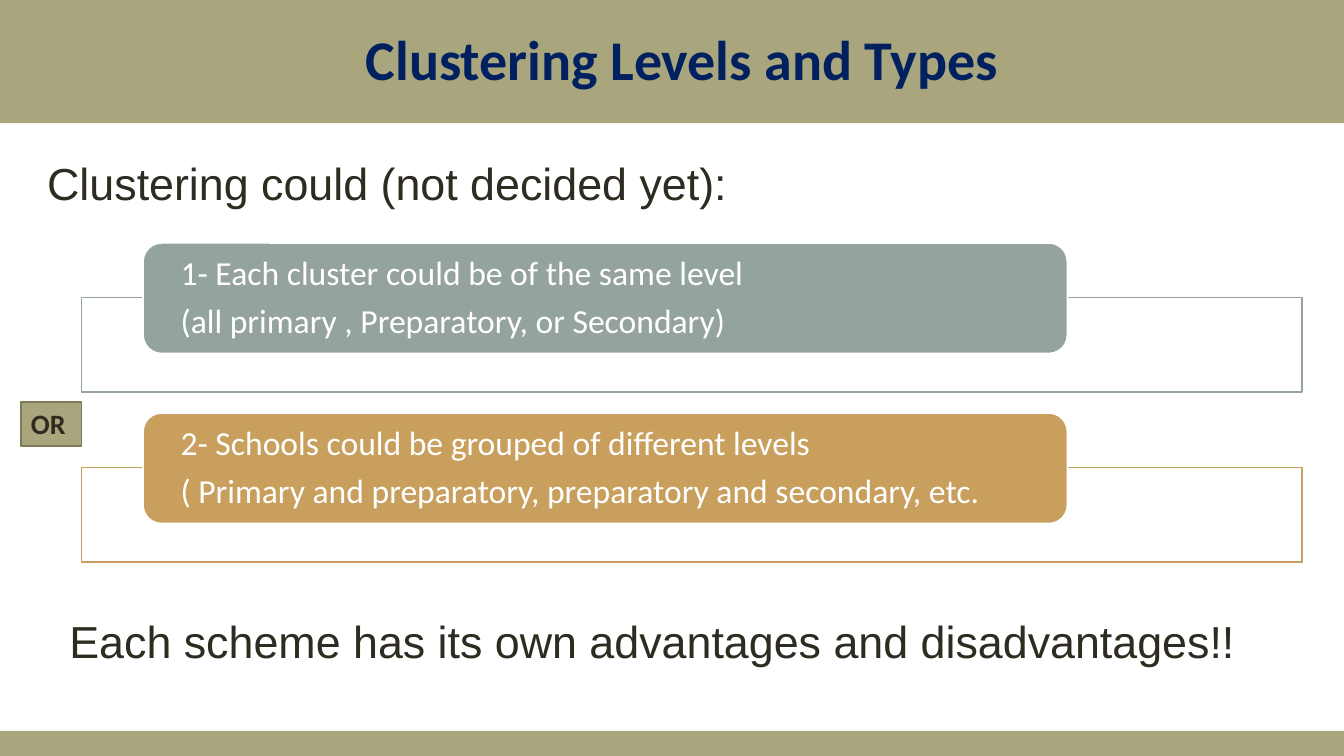
from pptx import Presentation
from pptx import util as u
from pptx.dml.color import RGBColor
from pptx.enum import shapes, text

# Content
TITLE = "Clustering Levels and Types"
# wording, (left, top, width, height)
STATEMENTS = [
    ("Clustering could (not decided yet):", (26.6, 108, 901.4, 46)),
    ("Each scheme has its own advantages and disadvantages!!", (42.5, 435, 869, 46)),
]
OPTIONS = [
    ("95A39D", ["1- Each cluster could be of the same level",
                "(all primary , Preparatory, or Secondary)"]),
    ("C89F5D", ["2- Schools could be grouped of different levels",
                "( Primary and preparatory, preparatory and secondary, etc."]),
]
OLIVE, OLIVE_EDGE, INK, NAVY, WHITE = "A9A57C", "7D7A5C", "2E2B21", "002060", "FFFFFF"

# Geometry in points
WIDTH, HEIGHT = 960, 540
HEADER_HEIGHT, FOOTER_HEIGHT = 88, 18
FRAME_LEFT, FRAME_WIDTH, FRAME_HEIGHT = 58.3, 872, 67.5
TAB_LEFT, TAB_TOP, TAB_WIDTH, TAB_HEIGHT = 102.2, 173.5, 660.3, 79
FRAME_DROP, OPTION_PITCH = 39, 121.5
RECTANGLE = shapes.MSO_SHAPE.RECTANGLE
ROUNDED = shapes.MSO_SHAPE.ROUNDED_RECTANGLE


def colour(value):
    return RGBColor.from_string(value)


def add_box(page, kind, place, fill, line=None):
    box = page.shapes.add_shape(kind, *map(u.Pt, place))
    box.shadow.inherit = False
    box.fill.solid()
    box.fill.fore_color.rgb = colour(fill)
    if line:
        box.line.color.rgb = colour(line)
        box.line.width = u.Pt(1.25)
    else:
        box.line.fill.background()
    return box


def write(box, lines, size, font, ink, bold=False,
          anchor=text.MSO_ANCHOR.TOP, spacing=1.0, after=0):
    frame = box.text_frame
    frame.word_wrap = True
    frame.vertical_anchor = anchor
    for index, line in enumerate(lines):
        para = frame.add_paragraph() if index else frame.paragraphs[0]
        para.alignment = text.PP_ALIGN.LEFT
        para.line_spacing = spacing
        para.space_before = u.Pt(0)
        para.space_after = u.Pt(after)
        span = para.add_run()
        span.text = line
        span.font.size = u.Pt(size)
        span.font.name = font
        span.font.bold = bold
        span.font.color.rgb = colour(ink)
    return frame


def main():
    deck = Presentation()
    deck.slide_width, deck.slide_height = u.Pt(WIDTH), u.Pt(HEIGHT)
    page = deck.slides.add_slide(deck.slide_layouts[5])

    # Header and footer bands
    add_box(page, RECTANGLE, (0, HEIGHT - FOOTER_HEIGHT, WIDTH, FOOTER_HEIGHT), OLIVE)
    header = add_box(page, RECTANGLE, (0, 0, WIDTH, HEADER_HEIGHT), OLIVE)

    # Title, placed above the header band
    title = page.shapes.title
    title.left, title.top, title.width, title.height = map(u.Pt, (254, 13.7, 480, 55.5))
    write(title, [TITLE], 40, "Calibri", NAVY, bold=True)
    header._element.addnext(title._element)

    # Opening and closing statements
    for wording, place in STATEMENTS:
        box = page.shapes.add_textbox(*map(u.Pt, place))
        write(box, [wording], 32, "Arial", INK)

    # Options: an outlined frame with a filled tab over it
    for index, (accent, lines) in enumerate(OPTIONS):
        top = TAB_TOP + index * OPTION_PITCH
        add_box(page, RECTANGLE,
                (FRAME_LEFT, top + FRAME_DROP, FRAME_WIDTH, FRAME_HEIGHT), WHITE, accent)
        tab = add_box(page, ROUNDED, (TAB_LEFT, top, TAB_WIDTH, TAB_HEIGHT), accent, WHITE)
        frame = write(tab, lines, 24, "Calibri", WHITE,
                      anchor=text.MSO_ANCHOR.MIDDLE, spacing=0.9, after=8.4)
        frame.margin_left = frame.margin_right = u.Pt(23)
        frame.margin_top = frame.margin_bottom = u.Pt(0)

    # Label between the options
    label = add_box(page, RECTANGLE, (15, 287, 43.3, 31.5), OLIVE, OLIVE_EDGE)
    write(label, ["OR"], 20, "Calibri", INK, bold=True)

    deck.save("out.pptx")


if __name__ == "__main__":
    main()
